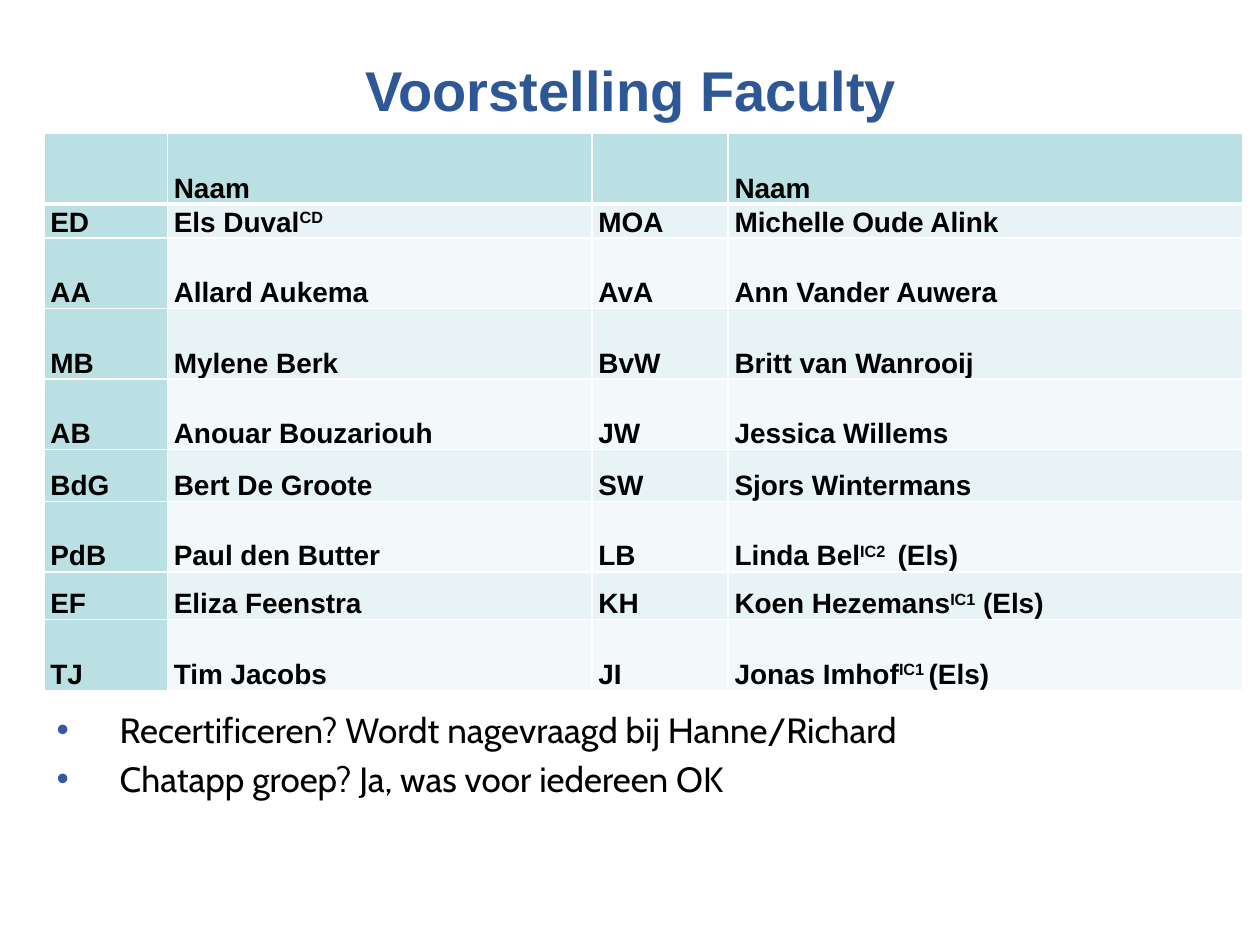
from dataclasses import dataclass

import lxml.etree
import pptx
import pptx.dml.color
import pptx.enum.text
import pptx.oxml.ns
import pptx.util

Inches = pptx.util.Inches
Pt = pptx.util.Pt
Color = pptx.dml.color.RGBColor.from_string
qn = pptx.oxml.ns.qn


@dataclass(frozen=True)
class Theme:
    title_color: str = "2E5796"
    text_color: str = "000000"
    bullet_color: str = "3657A7"
    accent_fill: str = "BBE0E3"
    band_fills: tuple[str, str] = ("E7F3F4", "F3F9FA")
    border_color: str = "FFFFFF"
    table_font: str = "Arial"
    question_font: str = "Cabin"
    title_size: int = 32
    table_size: int = 16
    question_size: int = 20
    border_width: int = 1
    header_rule_width: int = 3


@dataclass(frozen=True)
class Member:
    initials: str
    name: str
    role: str = ""
    mentor: str = ""


THEME = Theme()
COLUMN_WIDTHS = (0.98, 3.37, 1.08, 4.08)
ROW_HEIGHTS = (0.56, 0.27, 0.56, 0.56, 0.56, 0.41, 0.56, 0.38, 0.56)
HEADER = (Member("", "Naam"), Member("", "Naam"))
FACULTY = (
    (Member("ED", "Els Duval", "CD"), Member("MOA", "Michelle Oude Alink")),
    (Member("AA", "Allard Aukema"), Member("AvA", "Ann Vander Auwera")),
    (Member("MB", "Mylene Berk"), Member("BvW", "Britt van Wanrooij")),
    (Member("AB", "Anouar Bouzariouh"), Member("JW", "Jessica Willems")),
    (Member("BdG", "Bert De Groote"), Member("SW", "Sjors Wintermans")),
    (Member("PdB", "Paul den Butter"), Member("LB", "Linda Bel", "IC2 ", " (Els)")),
    (Member("EF", "Eliza Feenstra"), Member("KH", "Koen Hezemans", "IC1", " (Els)")),
    (Member("TJ", "Tim Jacobs"), Member("JI", "Jonas Imhof", "IC1 ", "(Els)")),
)
QUESTIONS = (
    "Recertificeren? Wordt nagevraagd bij Hanne/Richard",
    "Chatapp groep? Ja, was voor iedereen OK",
)


def place(shape, left: float, top: float, width: float, height: float) -> None:
    shape.left, shape.top = Inches(left), Inches(top)
    shape.width, shape.height = Inches(width), Inches(height)


def style_font(paragraph, name: str, size: int, color: str, bold: bool) -> None:
    font = paragraph.font
    font.name, font.size, font.bold = name, Pt(size), bold
    font.color.rgb = Color(color)


def add_bullet(paragraph) -> None:
    """Give the paragraph a coloured bullet with a half-inch hanging indent."""
    properties = paragraph._p.get_or_add_pPr()
    properties.set("marL", str(Inches(0.5)))
    properties.set("indent", str(-Inches(0.5)))
    bullet_color = lxml.etree.SubElement(properties, qn("a:buClr"))
    lxml.etree.SubElement(bullet_color, qn("a:srgbClr"), val=THEME.bullet_color)
    lxml.etree.SubElement(properties, qn("a:buFont"), typeface="Arial")
    lxml.etree.SubElement(properties, qn("a:buChar"), char="•")


def set_borders(cell, top_width: int, bottom_width: int) -> None:
    """Draw all four borders; call before the fill, which must follow them."""
    side = THEME.border_width
    widths = {"lnL": side, "lnR": side, "lnT": top_width, "lnB": bottom_width}
    properties = cell._tc.get_or_add_tcPr()
    for tag, width in widths.items():
        line = lxml.etree.SubElement(properties, qn(f"a:{tag}"), w=str(Pt(width)))
        fill = lxml.etree.SubElement(line, qn("a:solidFill"))
        lxml.etree.SubElement(fill, qn("a:srgbClr"), val=THEME.border_color)


def write_cell(cell, text: str, role: str = "", mentor: str = "") -> None:
    """Write text, a superscript role and the mentor in one paragraph."""
    cell.vertical_anchor = pptx.enum.text.MSO_ANCHOR.BOTTOM
    cell.margin_left = cell.margin_right = Inches(0.05)
    cell.margin_top = cell.margin_bottom = 0
    paragraph = cell.text_frame.paragraphs[0]
    style_font(paragraph, THEME.table_font, THEME.table_size, THEME.text_color, True)
    for part in (text, role, mentor):
        if part:
            run = paragraph.add_run()
            run.text = part
            if part == role:
                run._r.get_or_add_rPr().set("baseline", "30000")


def add_title(slide) -> None:
    title = slide.shapes.title
    place(title, 0.51, 0.36, 9, 0.69)
    title.text_frame.text = "Voorstelling Faculty"
    heading = title.text_frame.paragraphs[0]
    heading.alignment = pptx.enum.text.PP_ALIGN.CENTER
    style_font(heading, THEME.table_font, THEME.title_size, THEME.title_color, True)


def add_questions(slide) -> None:
    questions = slide.placeholders[1]
    place(questions, 0.35, 5.57, 7.38, 1.73)
    frame = questions.text_frame
    frame.auto_size = pptx.enum.text.MSO_AUTO_SIZE.NONE
    frame.text = "\n".join(QUESTIONS)
    for index, paragraph in enumerate(frame.paragraphs):
        add_bullet(paragraph)
        paragraph.space_before = Pt(4 if index else 0)
        style_font(paragraph, THEME.question_font, THEME.question_size, THEME.text_color, False)


def add_faculty_table(slide) -> None:
    table = slide.shapes.add_table(
        len(ROW_HEIGHTS), len(COLUMN_WIDTHS), Inches(0.35), Inches(1.06),
        Inches(sum(COLUMN_WIDTHS)), Inches(sum(ROW_HEIGHTS)),
    ).table
    table.first_col = True
    for column, width in zip(table.columns, COLUMN_WIDTHS):
        column.width = Inches(width)
    for row, height in zip(table.rows, ROW_HEIGHTS):
        row.height = Inches(height)

    for row_index, members in enumerate((HEADER, *FACULTY)):
        top = THEME.header_rule_width if row_index == 1 else THEME.border_width
        bottom = THEME.header_rule_width if row_index == 0 else THEME.border_width
        for column_index in range(len(COLUMN_WIDTHS)):
            cell = table.cell(row_index, column_index)
            member = members[column_index // 2]
            if column_index % 2:
                write_cell(cell, member.name, member.role, member.mentor)
            else:
                write_cell(cell, member.initials)
            set_borders(cell, top, bottom)
            is_accent = row_index == 0 or column_index == 0
            band = THEME.band_fills[(row_index - 1) % 2]
            cell.fill.solid()
            cell.fill.fore_color.rgb = Color(THEME.accent_fill if is_accent else band)


def main() -> None:
    presentation = pptx.Presentation()
    presentation.slide_width, presentation.slide_height = Inches(10), Inches(7.5)
    slide = presentation.slides.add_slide(presentation.slide_layouts[1])
    add_title(slide)
    add_questions(slide)
    add_faculty_table(slide)
    presentation.save("out.pptx")


if __name__ == "__main__":
    main()
